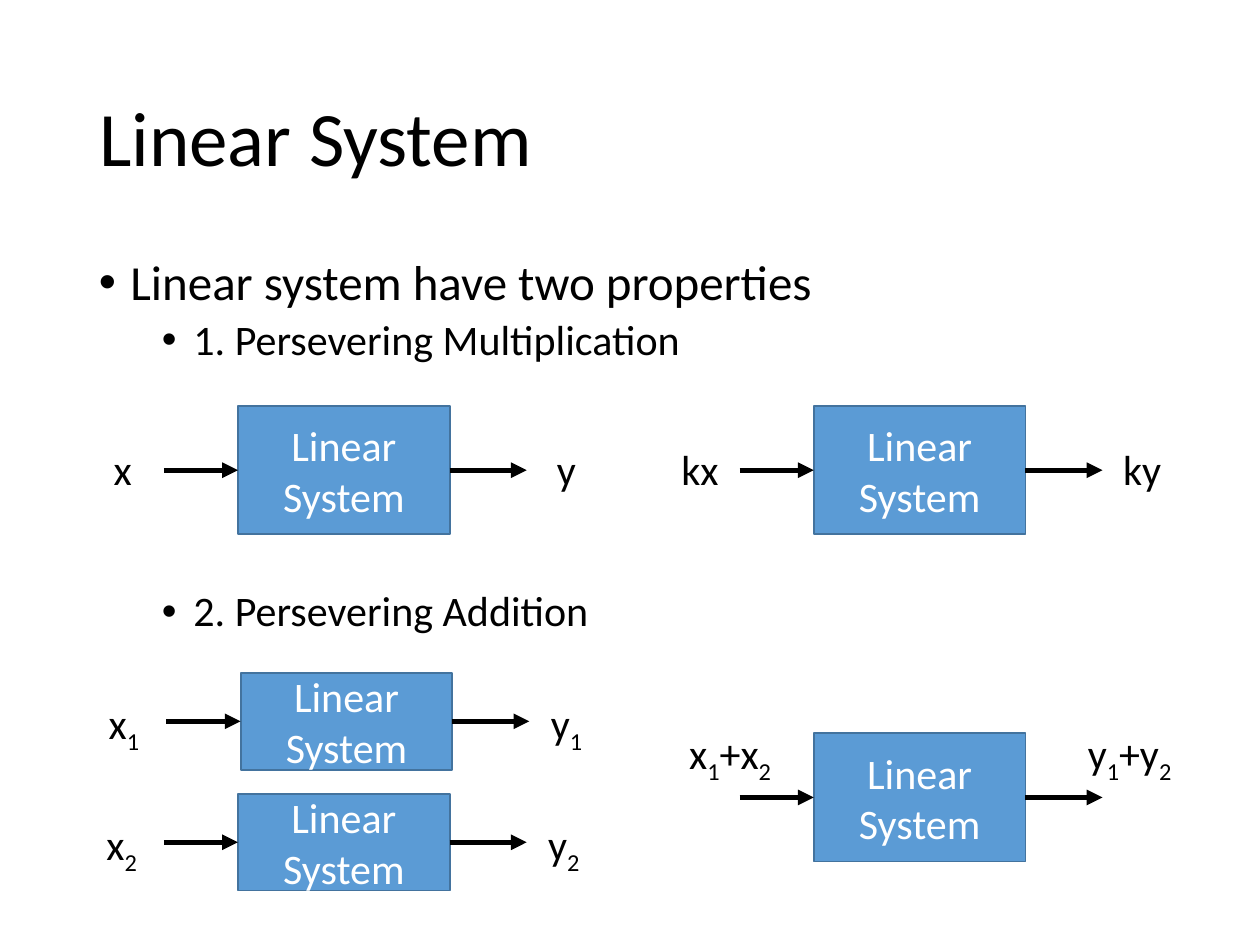
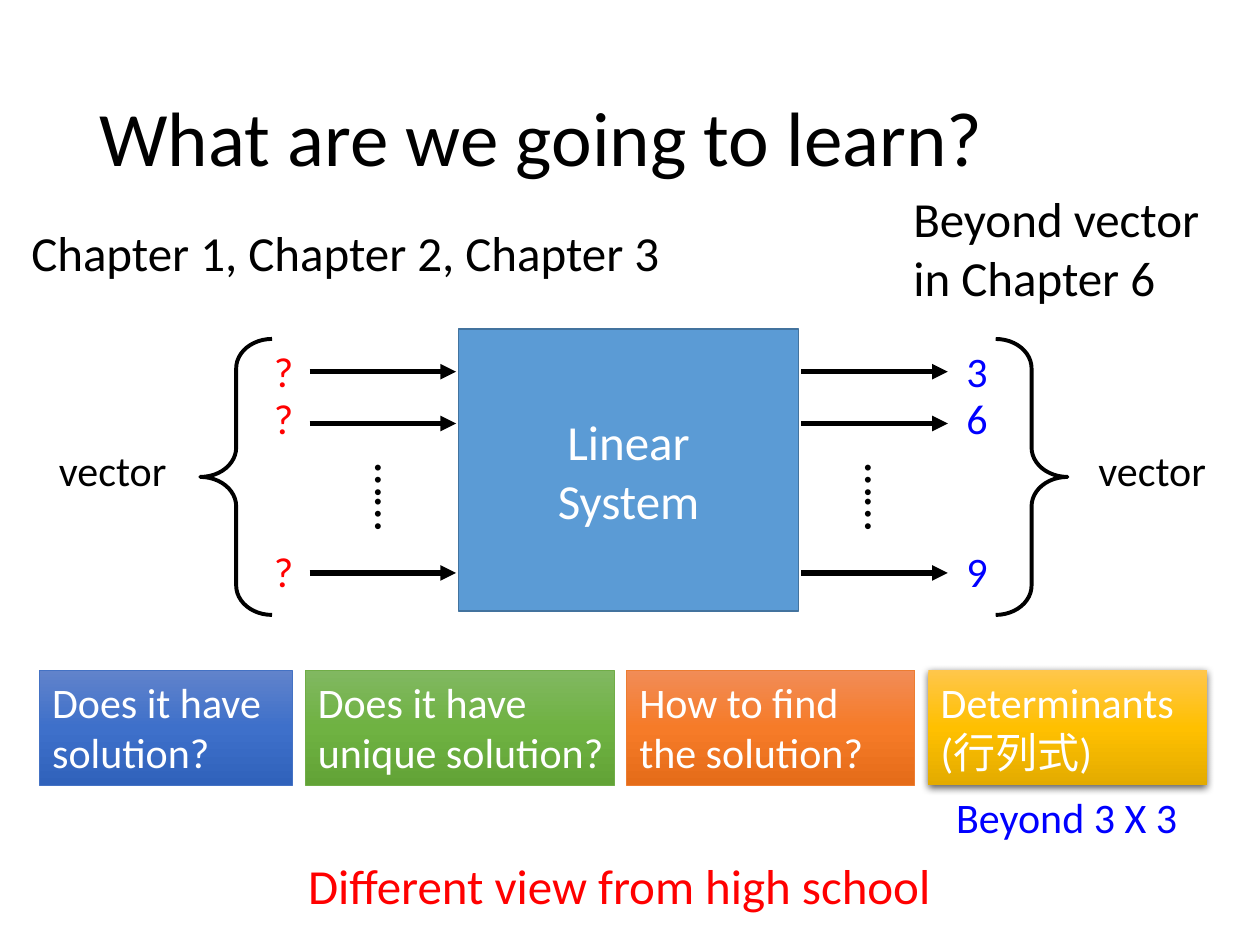
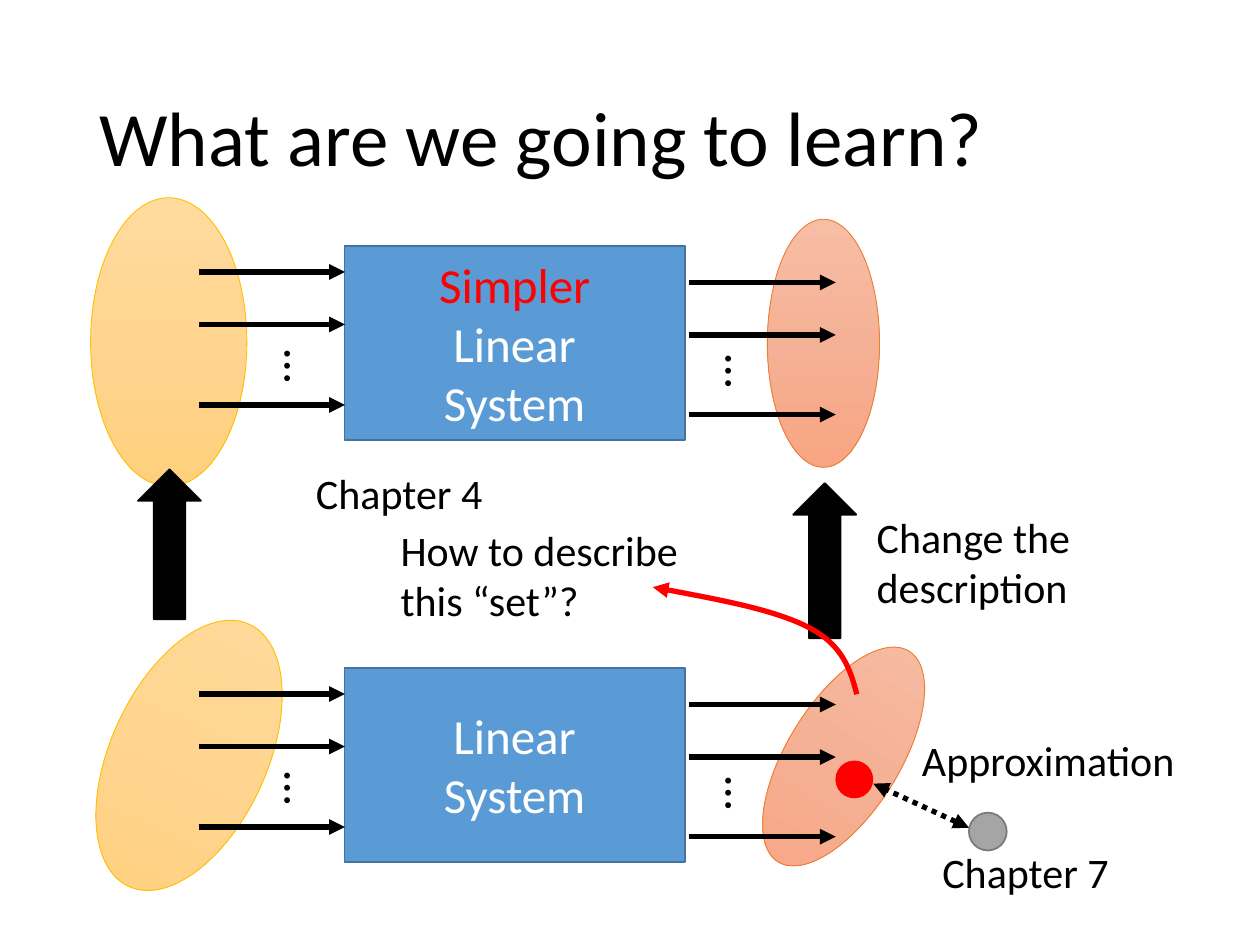
from copy import deepcopy
from dataclasses import dataclass
from typing import Any, NamedTuple, Optional, Sequence

from lxml.etree import SubElement
from pptx import Presentation
from pptx.dml.color import RGBColor
from pptx.enum.dml import MSO_LINE_DASH_STYLE as Dash
from pptx.enum.shapes import MSO_CONNECTOR_TYPE as ConnectorType
from pptx.enum.shapes import MSO_SHAPE as ShapeType
from pptx.enum.text import MSO_ANCHOR as Anchor
from pptx.enum.text import PP_ALIGN as Align
from pptx.oxml.ns import qn
from pptx.util import Pt

FONT = "Calibri"
BLACK = RGBColor(0x00, 0x00, 0x00)
WHITE = RGBColor(0xFF, 0xFF, 0xFF)
RED = RGBColor(0xFF, 0x00, 0x00)
BLUE = RGBColor(0x00, 0x00, 0xFF)
SYSTEM_FILL = RGBColor(0x5B, 0x9B, 0xD5)
SYSTEM_LINE = RGBColor(0x43, 0x73, 0x9E)
GRAY_FILL = RGBColor(0xA5, 0xA5, 0xA5)
GRAY_LINE = RGBColor(0x7A, 0x7A, 0x7A)
ROYAL_LINE = RGBColor(0x44, 0x72, 0xC4)
GREEN_LINE = RGBColor(0x70, 0xAD, 0x47)
ORANGE_LINE = RGBColor(0xED, 0x7D, 0x31)
GOLD_LINE = RGBColor(0xFF, 0xC0, 0x00)
ROYAL = (RGBColor(0x61, 0x83, 0xCB), RGBColor(0x3E, 0x70, 0xCA), RGBColor(0x30, 0x62, 0xBB))
GREEN = (RGBColor(0x81, 0xB8, 0x61), RGBColor(0x6F, 0xB2, 0x42), RGBColor(0x62, 0xA3, 0x36))
ORANGE = (RGBColor(0xF1, 0x8C, 0x57), RGBColor(0xF6, 0x7B, 0x28), RGBColor(0xE5, 0x6C, 0x19))
GOLD = (RGBColor(0xFF, 0xC6, 0x4B), RGBColor(0xFF, 0xC0, 0x00), RGBColor(0xE3, 0xAB, 0x00))
PALE_ORANGE = (RGBColor(0xF7, 0xBD, 0xA5), RGBColor(0xF5, 0xB1, 0x96), RGBColor(0xF8, 0xA5, 0x82))
PALE_GOLD = (RGBColor(0xFF, 0xDB, 0x9E), RGBColor(0xFF, 0xD5, 0x90), RGBColor(0xFF, 0xD0, 0x7C))

SYSTEM_TEXT = "Linear\nSystem"
LABEL_HEIGHT = 36.35
ARROW_LENGTH = 83.6


class Box(NamedTuple):
    left: float
    top: float
    width: float
    height: float


class Point(NamedTuple):
    x: float
    y: float


@dataclass(frozen=True)
class SmallSystem:
    left: float
    top: float
    height: float
    input: str
    output: str
    input_left: float
    output_left: float
    label_top: float
    label_width: float = 45.4


@dataclass(frozen=True)
class Question:
    text: str
    left: float
    width: float
    fill: Sequence[RGBColor]
    line: Optional[RGBColor]
    right_margin: float = 7.2


@dataclass(frozen=True)
class MappingRow:
    top: float
    text: str
    domain: Point
    domain_angle: float
    target: Point
    target_angle: float


SMALL_SYSTEMS = (
    SmallSystem(136, 232, 73.4, "x", "y", 47.5, 301, 249.8),
    SmallSystem(465, 232, 73.4, "kx", "ky", 377.3, 630, 249.8),
    SmallSystem(136, 453.6, 55.4, "x_2", "y_2", 46.8, 299.5, 464.4),
    SmallSystem(137.5, 384.5, 55.4, "x_1", "y_1", 48.2, 301, 395.3),
    SmallSystem(465, 419, 73.4, "x_1+x_2", "y_1+y_2", 371.5, 599.8, 412.2, 91.4),
)
QUESTIONS = (
    Question("Does it have solution?", 22.7, 144.4, ROYAL, ROYAL_LINE),
    Question("Does it have unique solution?", 174.5, 176.4, GREEN, GREEN_LINE, 2),
    Question("How to find the solution?", 358.2, 164.6, ORANGE, ORANGE_LINE),
    Question("Determinants (行列式)", 530.5, 159.3, GOLD, None),
)
MAPPING_ROWS = (
    MappingRow(381.6, SYSTEM_TEXT, Point(63.4, 349.2), 24.7, Point(450, 361.4), 31.9),
    MappingRow(140.4, f"Simpler\n{SYSTEM_TEXT}", Point(51.8, 113), 0, Point(438.5, 125.3), 0),
)
SET_CURVE = (
    Point(489.6, 396.7), Point(486, 383), Point(481.7, 368.6), Point(462.2, 358.6),
    Point(442.8, 348.5), Point(407.5, 342), Point(373, 335.5),
)


def add_text(frame: Any, text: str, *, size: float = 24, color: RGBColor = BLACK,
             align: Any = Align.LEFT, line_spacing: Optional[float] = None,
             space_before: float = 0, margin: float = 0, hanging: float = 0,
             bullet: bool = False) -> None:
    for line in text.split("\n"):
        paragraph = frame.add_paragraph() if frame.text else frame.paragraphs[0]
        paragraph.alignment = align
        paragraph.line_spacing = line_spacing
        paragraph.space_before = Pt(space_before)
        properties = paragraph._p.get_or_add_pPr()
        if margin:
            properties.set("marL", str(Pt(margin)))
            properties.set("indent", str(Pt(-hanging)))
        if bullet:
            SubElement(properties, qn("a:buFont")).set("typeface", "Arial")
            SubElement(properties, qn("a:buChar")).set("char", "•")
        first, *rest = line.split("_")
        pieces = [(first, False)]
        for part in rest:
            pieces += [(part[:1], True), (part[1:], False)]
        for piece, subscript in pieces:
            if not piece:
                continue
            run = paragraph.add_run()
            run.text = piece
            run.font.name = FONT
            run.font.size = Pt(size)
            run.font.color.rgb = color
            if subscript:
                run._r.get_or_add_rPr().set("baseline", "-25000")


def add_text_box(slide: Any, box: Box, text: str = "", *, rotation: float = 0,
                 wrap: bool = True, anchor: Any = Anchor.TOP, **text_format: Any) -> Any:
    shape = slide.shapes.add_textbox(*map(Pt, box))
    shape.rotation = rotation
    frame = shape.text_frame
    frame.word_wrap = wrap
    frame.vertical_anchor = anchor
    if text:
        add_text(frame, text, **text_format)
    return frame


def set_line(line: Any, color: Optional[RGBColor], width: float) -> None:
    if color is None:
        line.fill.background()
    else:
        line.color.rgb = color
        line.width = Pt(width)


def set_gradient(shape: Any, colors: Sequence[RGBColor]) -> None:
    fill = shape.fill
    fill.gradient()
    fill.gradient_angle = 270
    stop_list = shape._element.spPr.find(".//" + qn("a:gsLst"))
    stop_list.append(deepcopy(stop_list[0]))
    for stop, color, position in zip(fill.gradient_stops, colors, (0, 0.5, 1)):
        stop.color.rgb = color
        stop.position = position


def add_shape(slide: Any, kind: Any, box: Box, *, fill: Any = None,
              line: Optional[RGBColor] = None, line_width: float = 1,
              rotation: float = 0) -> Any:
    shape = slide.shapes.add_shape(kind, *map(Pt, box))
    shape.shadow.inherit = False
    shape.rotation = rotation
    if fill is None:
        shape.fill.background()
    elif isinstance(fill, RGBColor):
        shape.fill.solid()
        shape.fill.fore_color.rgb = fill
    else:
        set_gradient(shape, fill)
    set_line(shape.line, line, line_width)
    return shape


def add_block_arrow(slide: Any, box: Box) -> None:
    add_shape(slide, ShapeType.RIGHT_ARROW, box, fill=BLACK, line=BLACK, rotation=270)


def add_shadow(shape: Any) -> None:
    effects = shape._element.spPr.find(qn("a:effectLst"))
    shadow = SubElement(effects, qn("a:outerShdw"), blurRad=str(Pt(4.5)),
                        dist=str(Pt(1.5)), dir="5400000", algn="ctr", rotWithShape="0")
    color = SubElement(shadow, qn("a:srgbClr"), val=str(BLACK))
    SubElement(color, qn("a:alpha"), val="63000")


def add_arrowhead(shape: Any, end: str = "tailEnd") -> None:
    SubElement(shape.line._get_or_add_ln(), qn(f"a:{end}"), type="triangle")


def add_arrow(slide: Any, start: Point, end: Point) -> Any:
    connector = slide.shapes.add_connector(ConnectorType.STRAIGHT, *map(Pt, (*start, *end)))
    SubElement(connector._element.spPr, qn("a:effectLst"))
    set_line(connector.line, BLACK, 3)
    return connector


def add_arrow_column(slide: Any, left: float, tops: Sequence[float]) -> None:
    for top in tops:
        add_arrowhead(add_arrow(slide, Point(left, top), Point(left + ARROW_LENGTH, top)))


def add_system(slide: Any, box: Box, text: str = SYSTEM_TEXT, size: float = 28) -> Any:
    shape = add_shape(slide, ShapeType.RECTANGLE, box, fill=SYSTEM_FILL, line=SYSTEM_LINE)
    frame = shape.text_frame
    frame.word_wrap = True
    frame.vertical_anchor = Anchor.MIDDLE
    add_text(frame, text, size=size, color=WHITE, align=Align.CENTER)
    return shape


def add_dots(slide: Any, left: float, top: float, text: str) -> None:
    add_text_box(slide, Box(left, top, 61.9, 41.2), text, rotation=90, size=28)


def add_curve(slide: Any, points: Sequence[Point], color: RGBColor) -> None:
    first, *others = [(Pt(point.x), Pt(point.y)) for point in points]
    builder = slide.shapes.build_freeform(*first)
    builder.add_line_segments(others, close=False)
    shape = builder.convert_to_shape()
    shape.shadow.inherit = False
    shape.fill.background()
    set_line(shape.line, color, 3)
    add_arrowhead(shape)
    outline = shape._element.spPr.find(".//" + qn("a:path"))
    segments = outline.findall(qn("a:lnTo"))
    for start in range(0, len(segments), 3):
        curve = SubElement(outline, qn("a:cubicBezTo"))
        for segment in segments[start:start + 3]:
            curve.append(segment[0])
            outline.remove(segment)


def add_titled_slide(presentation: Any, title: str) -> Any:
    slide = presentation.slides.add_slide(presentation.slide_layouts[6])
    add_text_box(slide, Box(49.7, 28.75, 621, 104.4), title, anchor=Anchor.MIDDLE,
                 size=44, line_spacing=0.9)
    return slide


def draw_small_system(slide: Any, system: SmallSystem) -> None:
    box = Box(system.left, system.top, 121, system.height)
    shape = add_system(slide, box, size=24)
    middle = box.top + box.height / 2
    right = box.left + box.width
    arrow_in = add_arrow(slide, Point(box.left - 42.4, middle), Point(box.left, middle))
    arrow_in.end_connect(shape, 1)
    arrow_out = add_arrow(slide, Point(right, middle), Point(right + 44, middle))
    arrow_out.begin_connect(shape, 3)
    for arrow in (arrow_in, arrow_out):
        add_arrowhead(arrow)
    for left, text in ((system.input_left, system.input), (system.output_left, system.output)):
        add_text_box(slide, Box(left, system.label_top, system.label_width, LABEL_HEIGHT),
                     text, align=Align.CENTER)


def draw_properties_slide(presentation: Any) -> None:
    slide = add_titled_slide(presentation, "Linear System")
    frame = add_text_box(slide, Box(49.5, 143.75, 621, 342.6))
    add_text(frame, "Linear system have two properties", size=28, line_spacing=0.9,
             space_before=10, margin=18, hanging=18, bullet=True)
    for text, gap in (("1. Persevering Multiplication", 5), ("2. Persevering Addition", 129)):
        add_text(frame, text, line_spacing=0.9, space_before=gap,
                 margin=54, hanging=18, bullet=True)
    for system in SMALL_SYSTEMS:
        draw_small_system(slide, system)


def draw_question(slide: Any, question: Question) -> None:
    shape = add_shape(slide, ShapeType.RECTANGLE, Box(question.left, 383, question.width, 65.8),
                      fill=question.fill, line=question.line, line_width=0.5)
    if question.line is None:
        add_shadow(shape)
    frame = shape.text_frame
    frame.word_wrap = True
    frame.vertical_anchor = Anchor.TOP
    frame.margin_right = Pt(question.right_margin)
    add_text(frame, question.text, color=WHITE)


def draw_questions_slide(presentation: Any) -> None:
    slide = add_titled_slide(presentation, "What are we going to learn?")
    for question in QUESTIONS:
        draw_question(slide, question)
    add_text_box(slide, Box(28.8, 485.3, 578.2, 41.2), "Different view from high school",
                 size=28, color=RED, align=Align.CENTER, margin=72)
    add_text_box(slide, Box(539.3, 448.6, 141.8, LABEL_HEIGHT), "Beyond 3 X 3",
                 wrap=False, color=BLUE)

    add_system(slide, Box(262, 188, 194.4, 161.3))
    for arrow_left, dots_left in ((177, 194.4), (458, 474.5)):
        add_arrow_column(slide, arrow_left, (212.4, 242, 327.4))
        add_dots(slide, dots_left, 268.2, "……")
    for left, color, values in ((149.4, RED, "???"), (545.2, BLUE, "369")):
        for value, top in zip(values, (193.7, 221, 308.2)):
            add_text_box(slide, Box(left, top, 83.5, LABEL_HEIGHT), value, color=color)

    add_text_box(slide, Box(10.8, 123.8, 394.6, 41.2), "Chapter 1, Chapter 2, Chapter 3",
                 size=28)
    add_text_box(slide, Box(514.8, 104.4, 190, 75), "Beyond vector in Chapter 6", size=28)
    for kind, brace_left, label_left in ((ShapeType.LEFT_BRACE, 114.5, 26.6),
                                         (ShapeType.RIGHT_BRACE, 569, 620.6)):
        brace = add_shape(slide, kind, Box(brace_left, 193.7, 41, 157.7),
                          line=BLACK, line_width=2.25)
        brace.adjustments[0] = 0.41
        add_text_box(slide, Box(label_left, 250.6, 76.3, LABEL_HEIGHT), "vector", wrap=False)


def draw_mapping_row(slide: Any, row: MappingRow) -> None:
    add_shape(slide, ShapeType.OVAL, Box(*row.target, 64.1, 141.8), fill=PALE_ORANGE,
              line=ORANGE_LINE, line_width=0.5, rotation=row.target_angle)
    add_shape(slide, ShapeType.OVAL, Box(*row.domain, 89.3, 164.9), fill=PALE_GOLD,
              line=GOLD_LINE, line_width=0.5, rotation=row.domain_angle)
    system = add_system(slide, Box(196.9, row.top, 194.4, 110.9), row.text)
    if row.text != SYSTEM_TEXT:
        system.text_frame.paragraphs[0].runs[0].font.color.rgb = RED
    add_arrow_column(slide, 394, [row.top + step for step in (21, 51, 96.5)])
    add_arrow_column(slide, 113.5, [row.top + step for step in (15, 45, 91)])
    add_dots(slide, 394.6, row.top + 65.5, "…")
    add_dots(slide, 142.6, row.top + 62.3, "…")


def draw_mapping_slide(presentation: Any) -> None:
    slide = add_titled_slide(presentation, "What are we going to learn?")
    add_block_arrow(slide, Box(427, 302.4, 88.6, 36))
    for row in MAPPING_ROWS:
        draw_mapping_row(slide, row)
    add_block_arrow(slide, Box(54, 293, 85.7, 36))
    add_curve(slide, SET_CURVE, RED)
    add_shape(slide, ShapeType.OVAL, Box(553.7, 464.4, 21.6, 21.6),
              fill=GRAY_FILL, line=GRAY_LINE)
    add_shape(slide, ShapeType.OVAL, Box(477.4, 434.6, 21.6, 21.6), fill=RED)
    approximation = add_arrow(slide, Point(553.7, 473), Point(499, 447.8))
    approximation.line.dash_style = Dash.ROUND_DOT
    for end in ("headEnd", "tailEnd"):
        add_arrowhead(approximation, end)
    for box, text in (
        (Box(221.8, 295.9, 178.6, 65.4), "How to describe this “set”?"),
        (Box(173.5, 263.5, 129.6, LABEL_HEIGHT), "Chapter 4"),
        (Box(531.4, 480.2, 129.6, LABEL_HEIGHT), "Chapter 7"),
        (Box(519.8, 416.2, 160.6, LABEL_HEIGHT), "Approximation"),
        (Box(493.9, 288.7, 160.6, 65.4), "Change the description"),
    ):
        add_text_box(slide, box, text)


def main() -> None:
    presentation = Presentation()
    presentation.slide_width = Pt(720)
    presentation.slide_height = Pt(540)
    draw_properties_slide(presentation)
    draw_questions_slide(presentation)
    draw_mapping_slide(presentation)
    presentation.save("out.pptx")


if __name__ == "__main__":
    main()
